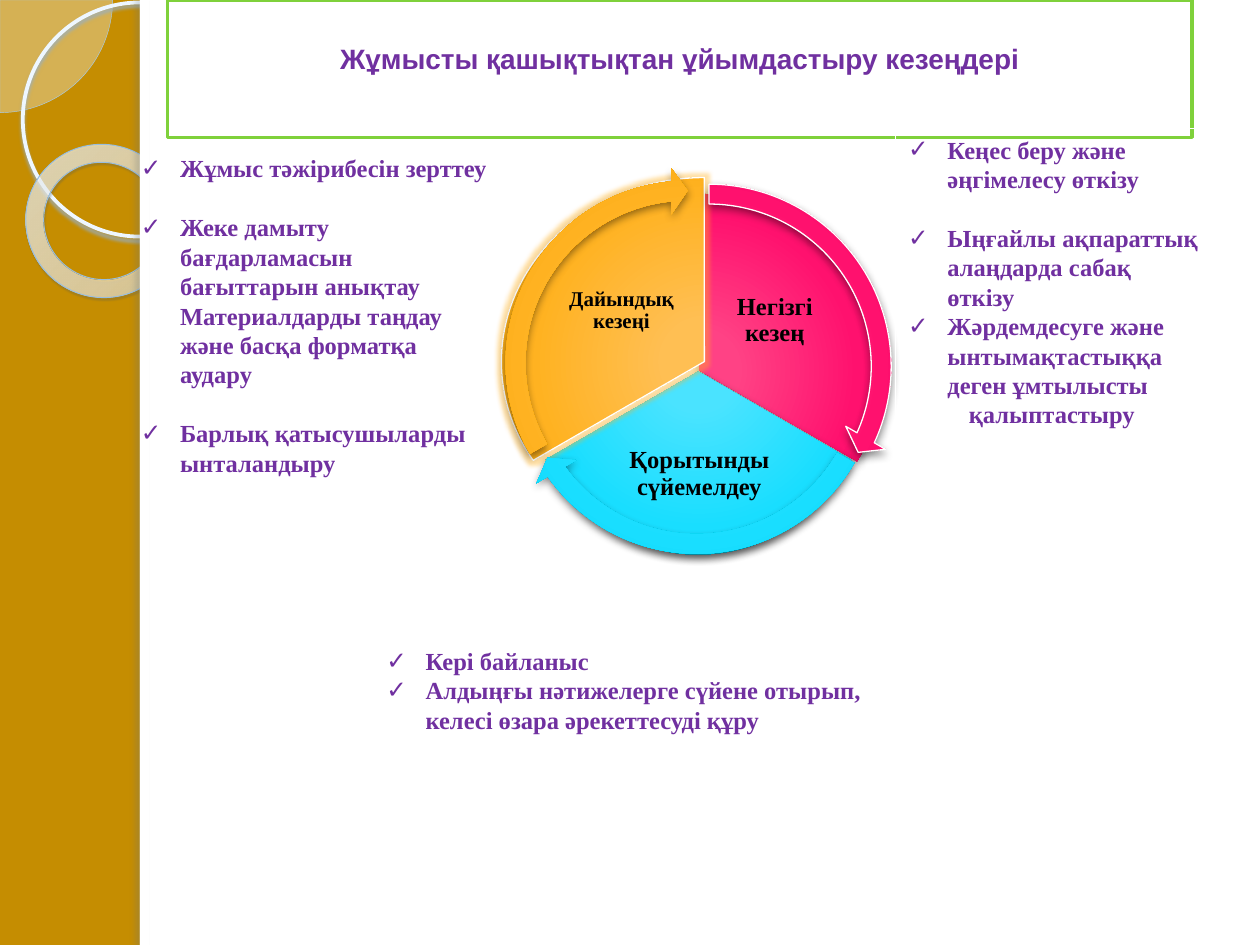
from dataclasses import dataclass
from typing import NamedTuple, Optional

from lxml.etree import SubElement
from pptx import Presentation
from pptx.dml.color import RGBColor
from pptx.enum.shapes import MSO_SHAPE
from pptx.enum.text import MSO_ANCHOR, PP_ALIGN
from pptx.oxml import parse_xml
from pptx.oxml.ns import nsdecls, qn
from pptx.util import Cm, Pt

COLORS = {
    "gold": "C58D01", "white": "FFFFFF", "black": "000000",
    "purple": "7030A0", "green": "7FD13B",
    "quarter": "F8FCFF", "quarter_line": "A6CBEC",
    "ring": "EEF7FF", "ring_shadow": "97AFC4",
    "donut_line": "98BEE0", "donut_shadow": "475765",
    "edge_shadow": "697580", "glow": "FFB221",
}
SERIF = "Times New Roman"
CENTER = (50, 50, 50, 50)
STOPS = (0, 15, 62, 97, 100)


class Box(NamedTuple):
    left: float
    top: float
    width: float
    height: float


class Shadow(NamedTuple):
    color: str
    alpha: float
    blur: float
    distance: float
    angle: float


class Stop(NamedTuple):
    position: int
    color: str
    alpha: int = 100


@dataclass
class Stage:
    text: str
    size: int
    shades: tuple
    pie: Box
    pie_angles: tuple
    label: Box
    arrow: Box
    arrow_angles: tuple
    outlined_pie: bool = False
    outlined_arrow: bool = False


@dataclass
class Item:
    text: str
    gap_before: float = 0
    bullet: bool = True


SOFT_SHADOW = Shadow(COLORS["black"], 43, 5, 2, 90)
BLANK_LINE = 16.8
ARROW_SIZE = 7.87

STAGES = [
    Stage("Негізгі кезең", 14, ("FF4386", "FF4285", "FF116E", "E80061", "CF0062"),
          Box(10.39, 3.91, 7.42, 7.11), (162, 18), Box(14.3, 5.41, 2.64, 2.11),
          Box(10.36, 3.45, ARROW_SIZE, ARROW_SIZE), (14.725, 161.994),
          outlined_arrow=True),
    Stage("Қорытынды сүйемелдеу", 14, ("4CE3FF", "4AE3FF", "19DEFF", "00CFEF", "00BAD3"),
          Box(10.57, 3.81, 7.01, 7.37), (18, 90), Box(12.22, 8.59, 3.76, 1.93),
          Box(10.11, 3.56, ARROW_SIZE, ARROW_SIZE), (86.72, 18.005)),
    Stage("Дайындық кезеңі", 12, ("FFBF54", "FFBF53", "FFB221", "F6A500", "D69900"),
          Box(10.11, 3.58, 8.18, 7.42), (90, 162), Box(11.07, 5.16, 2.92, 2.21),
          Box(9.93, 3.38, ARROW_SIZE, ARROW_SIZE), (158.73, 90),
          outlined_pie=True),
]

PREPARATION = [
    Item("Жұмыс тәжірибесін зерттеу"),
    Item("Жеке дамыту бағдарламасын бағыттарын анықтау "
         "Материалдарды таңдау және басқа форматқа аудару", BLANK_LINE),
    Item("Барлық қатысушыларды ынталандыру", BLANK_LINE),
]
MAIN = [
    Item("Кеңес беру және әңгімелесу өткізу"),
    Item("Ыңғайлы ақпараттық алаңдарда сабақ өткізу", BLANK_LINE),
    Item("Жәрдемдесуге және ынтымақтастыққа деген ұмтылысты"),
    Item("қалыптастыру", bullet=False),
]
FOLLOW_UP = [
    Item("Кері байланыс"),
    Item("Алдыңғы нәтижелерге сүйене отырып, келесі өзара әрекеттесуді құру"),
]


def add_color(parent, color: str, alpha: float) -> None:
    clr = SubElement(parent, qn("a:srgbClr"), val=color)
    if alpha < 100:
        SubElement(clr, qn("a:alpha"), val=str(int(alpha * 1000)))


def set_radial_fill(shape, stops: list, focus: tuple) -> None:
    shape.fill.background()
    grad = parse_xml(f'<a:gradFill {nsdecls("a")} rotWithShape="1"/>')
    stop_list = SubElement(grad, qn("a:gsLst"))
    for stop in stops:
        gs = SubElement(stop_list, qn("a:gs"), pos=str(stop.position * 1000))
        add_color(gs, stop.color, stop.alpha)
    path_fill = SubElement(grad, qn("a:path"), attrib={"path": "circle"})
    sides = {side: str(value * 1000) for side, value in zip("ltrb", focus)}
    SubElement(path_fill, qn("a:fillToRect"), attrib=sides)
    properties = shape._element.spPr
    properties.replace(properties.find(qn("a:noFill")), grad)


def set_shadow(shape, shadow: Shadow) -> None:
    effects = shape._element.spPr.find(qn("a:effectLst"))
    outer = SubElement(effects, qn("a:outerShdw"), blurRad=str(Pt(shadow.blur)),
                       dist=str(Pt(shadow.distance)), dir=str(shadow.angle * 60000),
                       algn="ctr", rotWithShape="0")
    add_color(outer, shadow.color, shadow.alpha)


def set_glow(shape, color: str, radius: float, alpha: float) -> None:
    effects = shape._element.spPr.find(qn("a:effectLst"))
    add_color(SubElement(effects, qn("a:glow"), rad=str(Pt(radius))), color, alpha)


def draw_shape(slide, kind, box: Box, fill: Optional[str] = None,
               line: Optional[str] = None, width: float = 0.75,
               shadow: Optional[Shadow] = None, adjustments: tuple = ()):
    shape = slide.shapes.add_shape(kind, *map(Cm, box))
    shape.shadow.inherit = False
    for index, value in enumerate(adjustments):
        shape.adjustments[index] = value
    if fill:
        shape.fill.solid()
        shape.fill.fore_color.rgb = RGBColor.from_string(fill)
    else:
        shape.fill.background()
    if line:
        shape.line.color.rgb = RGBColor.from_string(line)
        shape.line.width = Pt(width)
    else:
        shape.line.fill.background()
    if shadow:
        set_shadow(shape, shadow)
    return shape


def add_run(paragraph, text: str, size: int, font: str, color: str) -> None:
    run = paragraph.add_run()
    run.text = text
    run.font.size, run.font.name, run.font.bold = Pt(size), font, True
    run.font.color.rgb = RGBColor.from_string(color)


def draw_label(slide, stage: Stage) -> None:
    frame = slide.shapes.add_textbox(*map(Cm, stage.label)).text_frame
    frame.word_wrap, frame.vertical_anchor = True, MSO_ANCHOR.MIDDLE
    frame.margin_left = frame.margin_right = Cm(0.05)
    frame.margin_top = frame.margin_bottom = Cm(0.05)
    paragraph = frame.paragraphs[0]
    paragraph.alignment, paragraph.line_spacing = PP_ALIGN.CENTER, 0.9
    add_run(paragraph, stage.text, stage.size, SERIF, COLORS["black"])


def fill_list(shape, items: list) -> None:
    frame = shape.text_frame
    frame.word_wrap, frame.vertical_anchor = True, MSO_ANCHOR.TOP
    for index, item in enumerate(items):
        paragraph = frame.add_paragraph() if index else frame.paragraphs[0]
        paragraph.alignment = PP_ALIGN.LEFT
        paragraph.space_before = Pt(item.gap_before)
        properties = paragraph._p.get_or_add_pPr()
        properties.set("marL", str(Cm(0.79 if item.bullet else 1.22)))
        properties.set("indent", str(Cm(-0.79 if item.bullet else 0)))
        if item.bullet:
            SubElement(properties, qn("a:buFont"), typeface="Arial")
            SubElement(properties, qn("a:buChar"), char="✓")
        add_run(paragraph, item.text, 14, SERIF, COLORS["purple"])


def draw_backdrop(slide) -> None:
    slide.background.fill.solid()
    slide.background.fill.fore_color.rgb = RGBColor.from_string(COLORS["gold"])
    quarter = draw_shape(slide, MSO_SHAPE.PIE, Box(-2.27, -2.27, 4.54, 4.54),
                         COLORS["quarter"], COLORS["quarter_line"], 0.25,
                         adjustments=(0, 54.02))
    tint = quarter._element.spPr.find(qn("a:solidFill")).find(qn("a:srgbClr"))
    SubElement(tint, qn("a:alpha"), val="33000")
    draw_shape(slide, MSO_SHAPE.OVAL, Box(0.46, 0.05, 4.72, 4.72), line=COLORS["ring"],
               width=2.15, shadow=Shadow(COLORS["ring_shadow"], 85, 2, 2, 90))
    donut = draw_shape(slide, MSO_SHAPE.DONUT, Box(0.51, 2.92, 3.12, 3.07),
                       line=COLORS["donut_line"], width=0.58, adjustments=(0.118,),
                       shadow=Shadow(COLORS["donut_shadow"], 35, 1, 1.2, 75))
    donut.rotation = 38.6
    set_radial_fill(donut, [Stop(0, "F9FCFF", 70), Stop(70, "FDFEFF", 55),
                            Stop(100, "9FD2FF", 60)], (-408, -50, 508, 150))
    # White page and its shaded left edge
    draw_shape(slide, MSO_SHAPE.RECTANGLE, Box(2.82, 0, 22.58, 19.05), COLORS["white"])
    draw_shape(slide, MSO_SHAPE.RECTANGLE, Box(2.82, 0, 0.2, 19.05), COLORS["white"],
               shadow=Shadow(COLORS["edge_shadow"], 25, 3, 3, 180))


def draw_title(slide) -> None:
    title = draw_shape(slide, MSO_SHAPE.RECTANGLE, Box(3.38, 0, 20.65, 2.77),
                       COLORS["white"], COLORS["green"], 2)
    frame = title.text_frame
    frame.word_wrap, frame.vertical_anchor = True, MSO_ANCHOR.TOP
    frame.margin_top = Cm(0.83)
    frame.paragraphs[0].alignment = PP_ALIGN.CENTER
    add_run(frame.paragraphs[0], "Жұмысты қашықтықтан ұйымдастыру кезеңдері",
            16, "Arial", COLORS["purple"])


def draw_cycle(slide) -> None:
    # Sectors with their labels
    for stage in STAGES:
        pie = draw_shape(slide, MSO_SHAPE.PIE, stage.pie, adjustments=stage.pie_angles,
                         line=COLORS["white"] if stage.outlined_pie else None,
                         shadow=None if stage.outlined_pie else SOFT_SHADOW)
        set_radial_fill(pie, list(map(Stop, STOPS, stage.shades)), CENTER)
        if stage.outlined_pie:
            set_glow(pie, COLORS["glow"], 5, 40)
        draw_label(slide, stage)
    # Arrows around the rim
    for stage in STAGES:
        arrow = draw_shape(slide, MSO_SHAPE.CIRCULAR_ARROW, stage.arrow,
                           line=COLORS["white"] if stage.outlined_arrow else None,
                           shadow=SOFT_SHADOW,
                           adjustments=(0.051, 3.275, *stage.arrow_angles, 0.059))
        set_radial_fill(arrow, list(map(Stop, STOPS, stage.shades)), CENTER)


def main() -> None:
    deck = Presentation()
    deck.slide_width, deck.slide_height = Cm(25.4), Cm(19.05)
    slide = deck.slides.add_slide(deck.slide_layouts[6])
    draw_backdrop(slide)
    draw_title(slide)
    draw_cycle(slide)
    # Lists beside and below the cycle
    fill_list(slide.shapes.add_textbox(Cm(2.59), Cm(2.97), Cm(7.54), Cm(8.64)), PREPARATION)
    fill_list(draw_shape(slide, MSO_SHAPE.RECTANGLE, Box(18.06, 2.59, 6.35, 8.2),
                         line=COLORS["white"]), MAIN)
    fill_list(slide.shapes.add_textbox(Cm(7.54), Cm(12.9), Cm(10.31), Cm(2.06)), FOLLOW_UP)
    deck.save("out.pptx")


if __name__ == "__main__":
    main()
